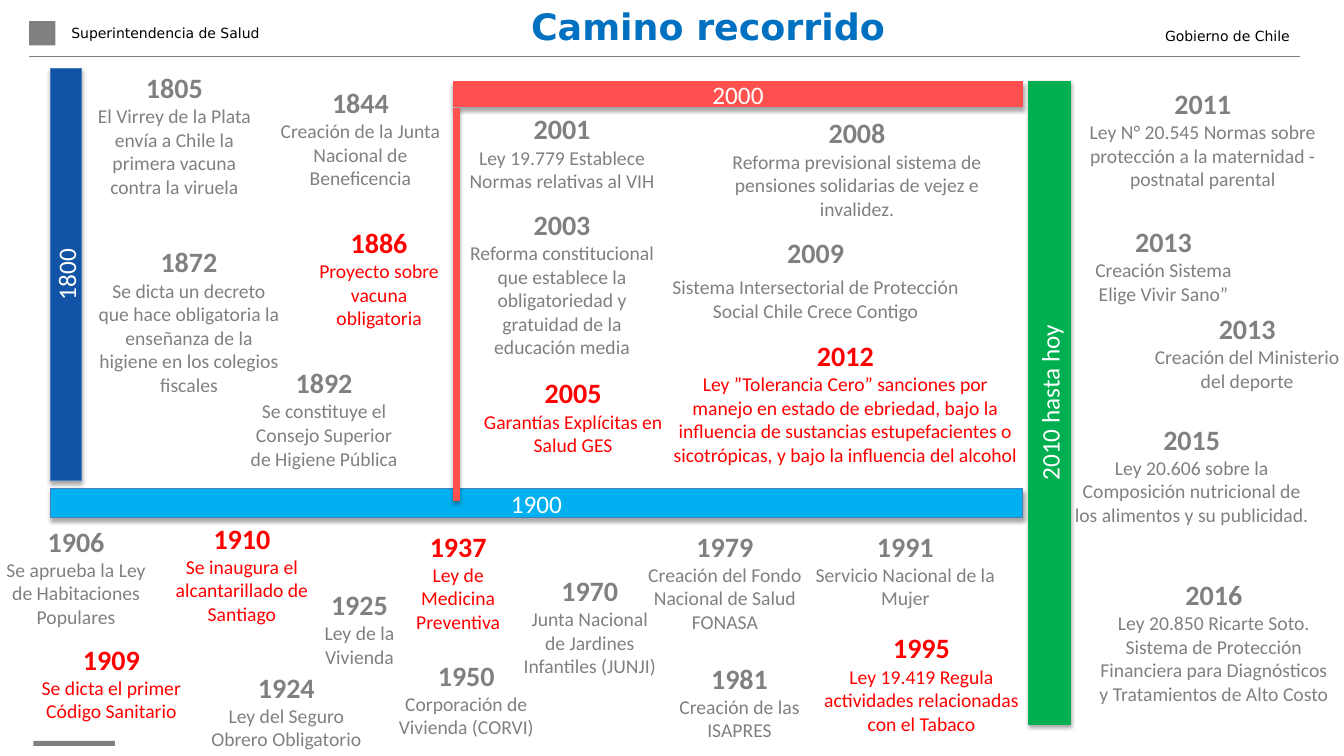
import lxml.etree
import pptx
import pptx.dml.color
import pptx.enum.shapes
import pptx.enum.text
import pptx.oxml.ns
import pptx.util
from dataclasses import dataclass

PX = 9144  # EMU per px: 100 px to the inch
ALIGN = pptx.enum.text.PP_ALIGN
ANCHOR = pptx.enum.text.MSO_ANCHOR
AUTO_SIZE = pptx.enum.text.MSO_AUTO_SIZE


@dataclass(frozen=True)
class Theme:
    body_font: str = "Calibri"
    header_font: str = "DejaVu Sans"
    title_size: int = 26
    year_size: int = 20
    bar_size: int = 18
    event_size: int = 14
    header_size: int = 10
    title: str = "0070C0"
    navy: str = "1153A5"
    coral: str = "FF5050"
    sky: str = "00B0F0"
    green: str = "00B050"
    bar_edge: str = "4B7EBC"
    gray: str = "808080"
    red: str = "FF0000"
    black: str = "000000"
    white: str = "FFFFFF"


THEME = Theme()

# Left, top, width, height, turn, fill, edge, label
BARS = [
    (-139, 257, 409, 31, 270, THEME.navy, THEME.bar_edge, "1800"),
    (450, 81, 564, 25, 0, THEME.coral, THEME.coral, "2000"),
    (50, 485, 964, 28, 0, THEME.sky, THEME.bar_edge, "1900"),
    (258, 299, 389, 6, 270, THEME.coral, THEME.coral, ""),
    (722, 379, 638, 41, 270, THEME.green, THEME.green, "2010 hasta hoy"),
]

# Left, top, width, height, year, event
EVENTS = [
    (78, 65, 190, 138, "1805", "El Virrey de la Plata envía a Chile la primera vacuna contra la viruela"),
    (264, 80, 187, 114, "1844", "Creación de la Junta Nacional de Beneficencia"),
    (86, 238, 203, 162, "1872", "Se dicta un decreto que hace obligatoria la enseñanza de la higiene "
                                "en los colegios fiscales"),
    (238, 358, 167, 114, "1892", "Se constituye el Consejo Superior de Higiene Pública"),
    (-10, 515, 171, 114, "1906", "Se aprueba la Ley de Habitaciones Populares"),
    (187, 660, 194, 91, "1924", "Ley del Seguro Obrero Obligatorio"),
    (307, 578, 99, 91, "1925", "Ley de la Vivienda"),
    (363, 648, 199, 91, "1950", "Corporación de Vivienda (CORVI)"),
    (507, 564, 156, 114, "1970", "Junta Nacional de Jardines Infantiles (JUNJI)"),
    (630, 520, 178, 114, "1979", "Creación del Fondo Nacional de Salud FONASA"),
    (650, 651, 167, 91, "1981", "Creación de las ISAPRES"),
    (798, 520, 200, 91, "1991", "Servicio Nacional de la Mujer"),
    (443, 106, 229, 91, "2001", "Ley 19.779 Establece Normas relativas al VIH"),
    (453, 201, 209, 162, "2003", "Reforma constitucional que establece la obligatoriedad y gratuidad "
                                 "de la educación media"),
    (709, 110, 282, 114, "2008", "Reforma previsional sistema de pensiones solidarias de vejez e invalidez."),
    (1053, 81, 280, 114, "2011", "Ley N° 20.545 Normas sobre protección a la maternidad - postnatal parental"),
    (1068, 218, 172, 91, "2013", "Creación Sistema Elige Vivir Sano”"),
    (1132, 304, 210, 91, "2013", "Creación del Ministerio del deporte"),
    (1053, 414, 258, 114, "2015", "Ley 20.606 sobre la Composición nutricional de los alimentos y su publicidad."),
    (1076, 568, 256, 138, "2016", "Ley 20.850 Ricarte Soto. Sistema de Protección Financiera para "
                                  "Diagnósticos y Tratamientos de Alto Costo"),
]

MILESTONES = [
    (302, 219, 148, 114, "1886", "Proyecto sobre vacuna obligatoria"),
    (13, 632, 195, 91, "1909", "Se dicta el primer Código Sanitario"),
    (151, 512, 178, 114, "1910", "Se inaugura el alcantarillado de Santiago"),
    (393, 520, 123, 114, "1937", "Ley de Medicina Preventiva"),
    (807, 621, 214, 114, "1995", "Ley 19.419 Regula actividades relacionadas con el Tabaco"),
    (461, 368, 215, 91, "2005", "Garantías Explícitas en Salud GES"),
    (656, 331, 365, 138, "2012", "Ley ”Tolerancia Cero” sanciones por manejo en estado de ebriedad, "
                                 "bajo la influencia de sustancias estupefacientes o sicotrópicas, "
                                 "y bajo la influencia del alcohol"),
]


def rgb(color):
    return pptx.dml.color.RGBColor.from_string(color)


def emu(*lengths):
    return [pptx.util.Emu(length * PX) for length in lengths]


def format_paragraph(paragraph, font, size, color, bold=False, align=ALIGN.CENTER):
    paragraph.alignment = align
    for run in paragraph.runs:
        run.font.name = font
        run.font.size = pptx.util.Pt(size)
        run.font.bold = bold
        run.font.color.rgb = rgb(color)


def add_effects(shape, shadowed):
    effects = lxml.etree.SubElement(shape._element.spPr, pptx.oxml.ns.qn("a:effectLst"))
    if shadowed:
        shadow = lxml.etree.SubElement(effects, pptx.oxml.ns.qn("a:outerShdw"), blurRad="39370",
                                       dist="22860", dir="5400000", rotWithShape="0")
        color = lxml.etree.SubElement(shadow, pptx.oxml.ns.qn("a:srgbClr"), val=THEME.black)
        lxml.etree.SubElement(color, pptx.oxml.ns.qn("a:alpha"), val="35000")


def add_rectangle(slide, box, fill):
    shape = slide.shapes.add_shape(pptx.enum.shapes.MSO_SHAPE.RECTANGLE, *emu(*box))
    shape.fill.solid()
    shape.fill.fore_color.rgb = rgb(fill)
    shape.line.fill.background()
    shape.shadow.inherit = False
    return shape


def add_bar(slide, left, top, width, height, turn, fill, edge, label):
    bar = add_rectangle(slide, (left, top, width, height), fill)
    bar.rotation = turn
    bar.line.color.rgb = rgb(edge)
    bar.line.width = pptx.util.Pt(0.75)
    bar.shadow.inherit = True
    add_effects(bar, shadowed=True)
    if label:
        frame = bar.text_frame
        frame.text = label
        frame.vertical_anchor = ANCHOR.MIDDLE
        format_paragraph(frame.paragraphs[0], THEME.body_font, THEME.bar_size, THEME.white)


def add_header(slide, left, top, text, align):
    frame = slide.shapes.add_textbox(*emu(left, top, 427, 34)).text_frame
    frame.word_wrap = True
    frame.vertical_anchor = ANCHOR.MIDDLE
    frame.text = text
    format_paragraph(frame.paragraphs[0], THEME.header_font, THEME.header_size, THEME.black, align=align)


def add_rule(slide, left, right, y):
    rule = slide.shapes.add_connector(pptx.enum.shapes.MSO_CONNECTOR.STRAIGHT, *emu(left, y, right, y))
    rule.line.color.rgb = rgb(THEME.gray)
    rule.line.width = pptx.util.Pt(0.25)
    add_effects(rule, shadowed=False)


def set_title(slide, box, text):
    title = slide.shapes.title
    title.left, title.top, title.width, title.height = emu(*box)
    title.text_frame.text = text
    title.text_frame.vertical_anchor = ANCHOR.TOP
    title.text_frame.auto_size = AUTO_SIZE.SHAPE_TO_FIT_TEXT
    format_paragraph(title.text_frame.paragraphs[0], THEME.header_font, THEME.title_size,
                     THEME.title, bold=True)


def add_event(slide, left, top, width, height, year, event, color=THEME.gray, gap=0):
    frame = slide.shapes.add_textbox(*emu(left, top, width, height)).text_frame
    frame.word_wrap = True
    frame.auto_size = AUTO_SIZE.SHAPE_TO_FIT_TEXT
    frame.text = year
    format_paragraph(frame.paragraphs[0], THEME.body_font, THEME.year_size, color, bold=True)
    paragraph = frame.add_paragraph()
    paragraph.text = event
    paragraph.space_before = pptx.util.Pt(gap)
    format_paragraph(paragraph, THEME.body_font, THEME.event_size, color)


def main():
    presentation = pptx.Presentation()
    presentation.slide_width, presentation.slide_height = emu(1333, 750)
    slide = presentation.slides.add_slide(presentation.slide_layouts[5])

    # Header and footer, each with one plain block
    set_title(slide, (258, -1, 889, 54), "Camino recorrido")
    add_rectangle(slide, (29, 21, 26, 24), THEME.gray)
    add_header(slide, 61, 16, "Superintendencia de Salud", ALIGN.LEFT)
    add_header(slide, 862, 19, "Gobierno de Chile", ALIGN.RIGHT)
    add_rule(slide, 29, 1289, 56)
    add_rectangle(slide, (33, 735, 81, 5), THEME.gray)

    # Period bars
    for bar in BARS:
        add_bar(slide, *bar)

    # Events, with the milestones in red
    for event in EVENTS:
        add_event(slide, *event)
    add_event(slide, 650, 229, 318, 98, "2009",
              "Sistema Intersectorial de Protección Social Chile Crece Contigo", gap=4)
    for milestone in MILESTONES:
        add_event(slide, *milestone, color=THEME.red)

    presentation.save("out.pptx")


if __name__ == "__main__":
    main()
